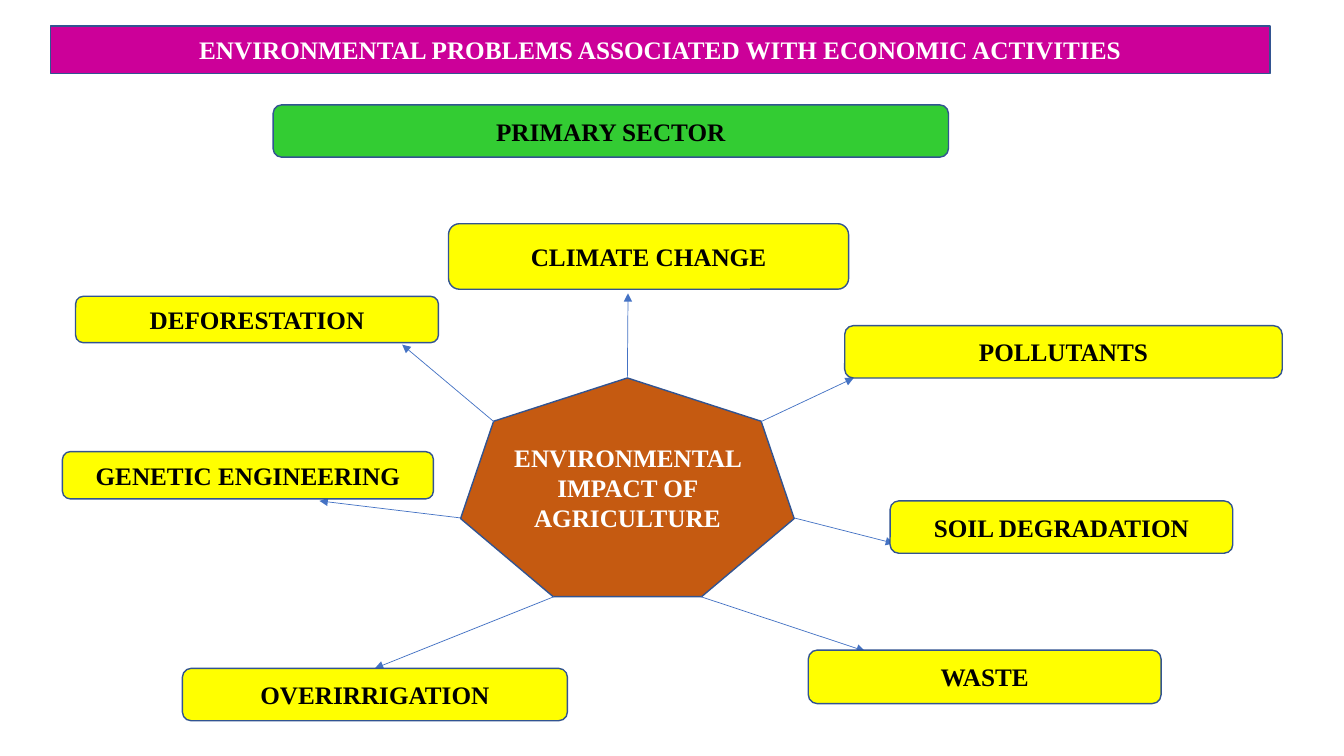
from lxml.etree import SubElement
from pptx import Presentation
from pptx.dml.color import RGBColor
from pptx.enum.shapes import MSO_CONNECTOR, MSO_SHAPE
from pptx.enum.text import MSO_ANCHOR, MSO_AUTO_SIZE, PP_ALIGN
from pptx.oxml import parse_xml
from pptx.oxml.ns import nsdecls, qn
from pptx.util import Pt

FONT = "Times New Roman"
BLACK, WHITE, YELLOW = "000000", "FFFFFF", "FFFF00"
OUTLINE, ARROW = "325491", "4472C4"
TOP_SIDE = 0

# Left, top, width, height in points
HUB = (329, 270, 238.3, 156.2)

# Corner of the hub (fraction of width, height), box, arrow tip, wording;
# clockwise from the top
IMPACTS = [
    ((0.5, 0), (320.4, 159.8, 285.8, 46.8), (448.6, 209.5), "CLIMATE CHANGE"),
    ((0.9, 0.2), (603.4, 232.6, 312.5, 37.4), (609.8, 270), "POLLUTANTS"),
    ((1, 0.64), (635.8, 357.8, 244.8, 37.4), (638.6, 388.1), "SOIL DEGRADATION"),
    ((0.72, 1), (577.4, 464.4, 252, 38.2), (617.8, 465.1), "WASTE"),
    ((0.28, 1), (130.3, 477.4, 275, 37.4), None, "OVERIRRIGATION"),
    ((0, 0.64), (44.6, 322.6, 265, 33.8), (228.2, 357.8), "GENETIC ENGINEERING"),
    ((0.1, 0.2), (54, 211.7, 259.2, 33.1), (287.3, 246.2), "DEFORESTATION"),
]


def paint(color_format, color):
    color_format.rgb = RGBColor.from_string(color)


def format_box(box, text, fill, color):
    """Give a shape its fill, outline and centred bold wording."""
    box.fill.solid()
    paint(box.fill.fore_color, fill)
    box.line.width = Pt(1)
    paint(box.line.color, OUTLINE)
    frame = box.text_frame
    frame.word_wrap = True
    frame.auto_size = MSO_AUTO_SIZE.NONE
    frame.vertical_anchor = MSO_ANCHOR.MIDDLE
    para = frame.paragraphs[0]
    para.alignment = PP_ALIGN.CENTER
    span = para.add_run()
    span.text = text
    span.font.name = FONT
    span.font.size = Pt(18)
    span.font.bold = True
    paint(span.font.color, color)


def add_box(page, kind, place, text, fill, color):
    box = page.shapes.add_shape(kind, *map(Pt, place))
    box.shadow.inherit = False
    format_box(box, text, fill, color)
    return box


def set_title(page, place, text, fill, color):
    title = page.shapes.title
    title.left, title.top, title.width, title.height = map(Pt, place)
    # Rounded outline for the placeholder
    title.element.spPr.append(parse_xml(
        f'<a:prstGeom {nsdecls("a")} prst="roundRect"><a:avLst/></a:prstGeom>'))
    format_box(title, text, fill, color)


def add_arrow(page, start, end):
    arrow = page.shapes.add_connector(
        MSO_CONNECTOR.STRAIGHT, *map(Pt, (*start, *end)))
    arrow.line.width = Pt(0.5)
    paint(arrow.line.color, ARROW)
    SubElement(arrow.line._get_or_add_ln(), qn("a:tailEnd"), type="triangle")
    SubElement(arrow.element.spPr, qn("a:effectLst"))
    return arrow


def hub_corner(across, down):
    left, top, width, height = HUB
    return left + across * width, top + down * height


def main():
    deck = Presentation()
    deck.slide_width, deck.slide_height = Pt(960), Pt(540)
    page = deck.slides.add_slide(deck.slide_layouts.get_by_name("Title Only"))

    # Headings
    set_title(page, (36, 18.7, 871.2, 33.8),
              "ENVIRONMENTAL PROBLEMS ASSOCIATED WITH ECONOMIC ACTIVITIES",
              "CC0099", WHITE)
    add_box(page, MSO_SHAPE.ROUNDED_RECTANGLE, (195.1, 74.9, 482.4, 37.4),
            "PRIMARY SECTOR", "33CC33", BLACK)

    # Hub
    add_box(page, MSO_SHAPE.HEPTAGON, HUB,
            "ENVIRONMENTAL IMPACT OF AGRICULTURE", "C55A11", WHITE)

    # Arrows lie under the impact boxes; one without a tip joins its box
    arrows = [add_arrow(page, hub_corner(*corner), tip or place[:2])
              for corner, place, tip, _ in IMPACTS]
    for arrow, (_, place, tip, text) in zip(arrows, IMPACTS):
        box = add_box(page, MSO_SHAPE.ROUNDED_RECTANGLE, place, text,
                      YELLOW, BLACK)
        if tip is None:
            arrow.end_connect(box, TOP_SIDE)

    deck.save("out.pptx")


if __name__ == "__main__":
    main()
